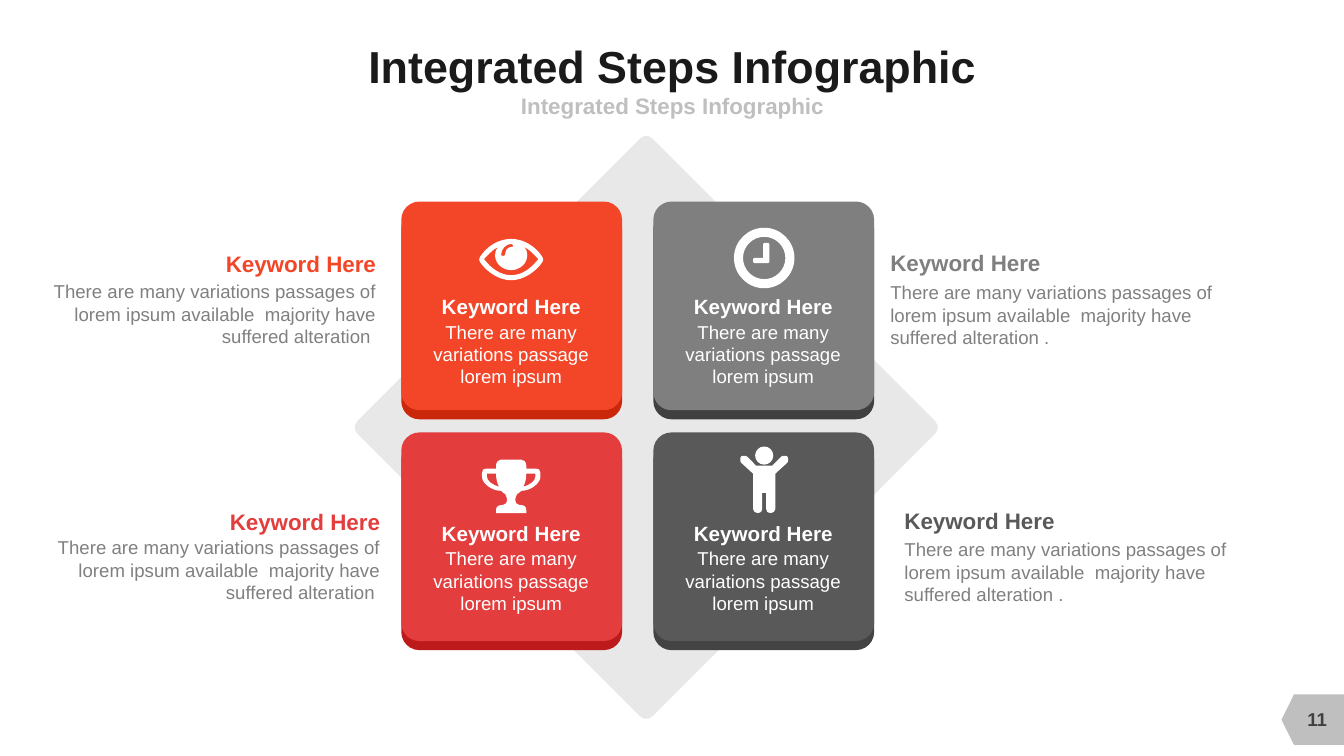
from dataclasses import dataclass

from lxml import etree
from pptx import Presentation
from pptx.dml.color import RGBColor
from pptx.enum.shapes import MSO_SHAPE
from pptx.enum.text import MSO_ANCHOR, MSO_AUTO_SIZE, PP_ALIGN
from pptx.oxml.ns import qn
from pptx.util import Inches, Pt

LEFT, CENTER, RIGHT = PP_ALIGN.LEFT, PP_ALIGN.CENTER, PP_ALIGN.RIGHT
TOP, MIDDLE = MSO_ANCHOR.TOP, MSO_ANCHOR.MIDDLE
ROUNDED = MSO_SHAPE.ROUNDED_RECTANGLE
PAGE_TAG = MSO_SHAPE.FLOWCHART_OFFPAGE_CONNECTOR

Step = tuple[float, ...]
Contour = list[Step]


@dataclass(frozen=True)
class Theme:
    font: str = "Arial"
    title: str = "1A1A1A"
    subtitle: str = "BFBFBF"
    diamond: str = "E8E8E8"
    page: str = "404040"
    body: str = "808080"
    white: str = "FFFFFF"
    title_size: float = 32
    head_size: float = 16
    tile_head_size: float = 14.7
    body_size: float = 13.3


@dataclass(frozen=True)
class Tile:
    col: int
    row: int
    face: str
    edge: str
    icon: list[Contour]


@dataclass(frozen=True)
class Note:
    x: float
    head_y: float
    body_y: float
    color: str
    align: PP_ALIGN
    ending: str


THEME = Theme()
KEYWORD = "Keyword Here"
TILE_TEXT = "There are many variations passage lorem ipsum"
NOTE_TEXT = "There are many variations passages of lorem ipsum available  majority have suffered alteration "
TILE_W, TILE_H, TILE_DEPTH = 2.19, 2.07, 0.09
COL_X, ROW_Y, TILE_HEAD_Y = (3.98, 6.48), (2, 4.29), (2.92, 5.17)
HEAD_W, NOTE_W = 1.51, 3.32
ARC = 0.55


def mirrored(contour: Contour, axis: float) -> Contour:
    flat = [step[i:i + 2] for step in contour for i in range(0, len(step), 2)]
    flipped = [(2 * axis - x, y) for x, y in reversed(flat)]
    result, used = [flipped[0]], 1
    for step in reversed(contour[1:]):
        count = len(step) // 2
        result.append(tuple(value for point in flipped[used:used + count] for value in point))
        used += count
    return result


def symmetric(*half: Step) -> Contour:
    return list(half) + mirrored(list(half), half[0][0])[1:]


def circle(cx: float, cy: float, r: float) -> Contour:
    k = ARC * r
    return symmetric((cx, cy - r), (cx - k, cy - r, cx - r, cy - k, cx - r, cy),
                     (cx - r, cy + k, cx - k, cy + r, cx, cy + r))


EYE = [
    symmetric((5.07, 2.37), (4.95, 2.37, 4.83, 2.44, 4.76, 2.55),
              (4.75, 2.56, 4.75, 2.59, 4.76, 2.6), (4.83, 2.7, 4.95, 2.78, 5.07, 2.78)),
    symmetric((5.07, 2.68), (4.99, 2.68, 4.91, 2.62, 4.91, 2.53),
              (4.91, 2.5, 4.92, 2.47, 4.94, 2.45), (4.88, 2.48, 4.84, 2.53, 4.8, 2.57),
              (4.87, 2.66, 4.96, 2.73, 5.07, 2.73)),
    [(5.07, 2.42), (5.02, 2.42, 4.97, 2.47, 4.97, 2.53), (4.97, 2.53, 4.98, 2.54, 4.99, 2.54),
     (5, 2.54, 5.01, 2.53, 5.01, 2.53), (5.01, 2.49, 5.03, 2.45, 5.07, 2.45),
     (5.08, 2.45, 5.09, 2.45, 5.09, 2.44), (5.09, 2.43, 5.08, 2.42, 5.07, 2.42)],
]
CLOCK = [
    circle(7.58, 2.56, 0.3),
    circle(7.58, 2.56, 0.21),
    [(7.63, 2.6), (7.62, 2.61), (7.48, 2.61), (7.47, 2.6), (7.47, 2.57), (7.48, 2.56),
     (7.57, 2.56), (7.57, 2.42), (7.58, 2.41), (7.62, 2.41), (7.63, 2.42)],
]
CUP_HANDLE = [(4.92, 4.7), (4.83, 4.7), (4.83, 4.73), (4.83, 4.77, 4.88, 4.81, 4.95, 4.83),
              (4.93, 4.79, 4.92, 4.75, 4.92, 4.7)]
TROPHY = [
    symmetric((5.07, 4.56), (4.97, 4.56), (4.95, 4.56, 4.92, 4.58, 4.92, 4.62), (4.92, 4.65),
              (4.82, 4.65), (4.8, 4.65, 4.78, 4.66, 4.78, 4.69), (4.78, 4.73),
              (4.78, 4.79, 4.87, 4.87, 4.97, 4.87), (4.99, 4.89, 5, 4.9, 5.01, 4.9),
              (5.02, 4.92, 5.03, 4.94, 5.03, 4.96), (5.03, 4.98, 5.02, 5.01, 4.99, 5.01),
              (4.95, 5.01, 4.92, 5.02, 4.92, 5.06), (4.92, 5.09), (5.07, 5.09)),
    CUP_HANDLE,
    mirrored(CUP_HANDLE, 5.07),
]
PERSON = [
    symmetric((7.58, 4.62), (7.5, 4.62), (7.41, 4.53), (7.4, 4.52, 7.36, 4.52, 7.35, 4.53),
              (7.34, 4.54, 7.34, 4.58, 7.35, 4.59), (7.47, 4.7), (7.47, 5.05),
              (7.47, 5.07, 7.49, 5.09, 7.51, 5.09), (7.55, 5.09, 7.56, 5.07, 7.56, 5.05),
              (7.56, 4.89), (7.58, 4.89)),
    circle(7.58, 4.52, 0.09),
]

TILES = [
    Tile(0, 0, "F34629", "CA270B", EYE),
    Tile(1, 0, "7F7F7F", "404040", CLOCK),
    Tile(1, 1, "595959", "434343", PERSON),
    Tile(0, 1, "E33D3D", "BD1B1B", TROPHY),
]
NOTES = [
    Note(8.83, 2.47, 2.79, "7F7F7F", LEFT, "."),
    Note(3.73, 2.48, 2.78, "F34629", RIGHT, ""),
    Note(3.77, 5.04, 5.32, "E33D3D", RIGHT, ""),
    Note(8.97, 5.03, 5.34, "595959", LEFT, "."),
]


def write(sp, text: str, *, size: float, color: str, bold: bool = False, align: PP_ALIGN = CENTER,
          anchor: MSO_ANCHOR = TOP, wrap: bool = True) -> None:
    tf = sp.text_frame
    tf.margin_left = tf.margin_right = tf.margin_top = tf.margin_bottom = 0
    tf.auto_size, tf.word_wrap, tf.vertical_anchor = MSO_AUTO_SIZE.NONE, wrap, anchor
    p = tf.paragraphs[0]
    p.alignment = align
    r = p.add_run()
    r.text = text
    r.font.name, r.font.size, r.font.bold = THEME.font, Pt(size), bold
    r.font.color.rgb = RGBColor.from_string(color)


def add_text(s, text: str, x: float, y: float, w: float, h: float, **fmt) -> None:
    write(s.shapes.add_textbox(*map(Inches, (x, y, w, h))), text, **fmt)


def paint(sp, color: str) -> None:
    sp.shadow.inherit = False
    sp.fill.solid()
    sp.fill.fore_color.rgb = RGBColor.from_string(color)
    sp.line.fill.background()


def add_block(s, kind: MSO_SHAPE, x: float, y: float, w: float, h: float, color: str,
              radius: float | None = None, rotation: float = 0) -> None:
    sp = s.shapes.add_shape(kind, *map(Inches, (x, y, w, h)))
    paint(sp, color)
    sp.rotation = rotation
    if radius is not None:
        sp.adjustments[0] = radius


def add_icon(s, contours: list[Contour]) -> None:
    paths = [[tuple(map(Inches, step[-2:])) for step in contour] for contour in contours]
    builder = s.shapes.build_freeform(*paths[0][0], scale=1.0)
    for i, points in enumerate(paths):
        if i:
            builder.move_to(*points[0])
        builder.add_line_segments(points[1:], close=True)
    sp = builder.convert_to_shape()
    paint(sp, THEME.white)
    steps = [step for contour in contours for step in contour[1:]]
    for segment, step in zip(list(sp._element.iter(qn("a:lnTo"))), steps):
        if len(step) == 6:
            segment.tag = qn("a:cubicBezTo")
            for i in (0, 2):
                control = etree.Element(qn("a:pt"), x=str(Inches(step[i]) - sp.left),
                                        y=str(Inches(step[i + 1]) - sp.top))
                segment.insert(i // 2, control)


def add_tile(s, tile: Tile) -> None:
    x, y, head_y = COL_X[tile.col], ROW_Y[tile.row], TILE_HEAD_Y[tile.row]
    for drop, color in ((TILE_DEPTH, tile.edge), (0, tile.face)):
        add_block(s, ROUNDED, x, y + drop, TILE_W, TILE_H, color, radius=0.087)
    add_icon(s, tile.icon)
    add_text(s, TILE_TEXT, x + 0.22, head_y + 0.26, 1.74, 0.67, size=THEME.body_size, color=THEME.white)
    add_text(s, KEYWORD, x + 0.4, head_y, 1.38, 0.25, size=THEME.tile_head_size, color=THEME.white,
             bold=True, wrap=False)


def add_note(s, note: Note) -> None:
    shift = 1 if note.align == RIGHT else 0
    add_text(s, NOTE_TEXT + note.ending, note.x - shift * NOTE_W, note.body_y, NOTE_W, 0.67,
             size=THEME.body_size, color=THEME.body, align=note.align)
    add_text(s, KEYWORD, note.x - shift * HEAD_W, note.head_y, HEAD_W, 0.27,
             size=THEME.head_size, color=note.color, bold=True, align=note.align, wrap=False)


def main() -> None:
    prs = Presentation()
    prs.slide_width, prs.slide_height = Inches(13.33), Inches(7.5)
    s = prs.slides.add_slide(prs.slide_layouts[5])
    title = s.shapes.title
    title.left, title.top, title.width, title.height = map(Inches, (2.56, 0.39, 8.22, 0.52))
    heading = "Integrated Steps Infographic"
    write(title, heading, size=THEME.title_size, color=THEME.title, bold=True, anchor=MIDDLE, wrap=False)
    add_text(s, heading, 3.67, 0.9, 6, 0.29, size=THEME.head_size, color=THEME.subtitle, bold=True, anchor=MIDDLE)
    add_block(s, PAGE_TAG, 12.77, 6.83, 0.5, 0.62, THEME.subtitle, rotation=90)
    add_text(s, "11", 12.73, 6.93, 0.67, 0.4, size=THEME.body_size, color=THEME.page, bold=True, anchor=MIDDLE)
    add_block(s, ROUNDED, 4.34, 2.17, 4.14, 4.14, THEME.diamond, radius=0.021, rotation=315)
    for tile in TILES:
        add_tile(s, tile)
    for note in NOTES:
        add_note(s, note)
    prs.save("out.pptx")


if __name__ == "__main__":
    main()
